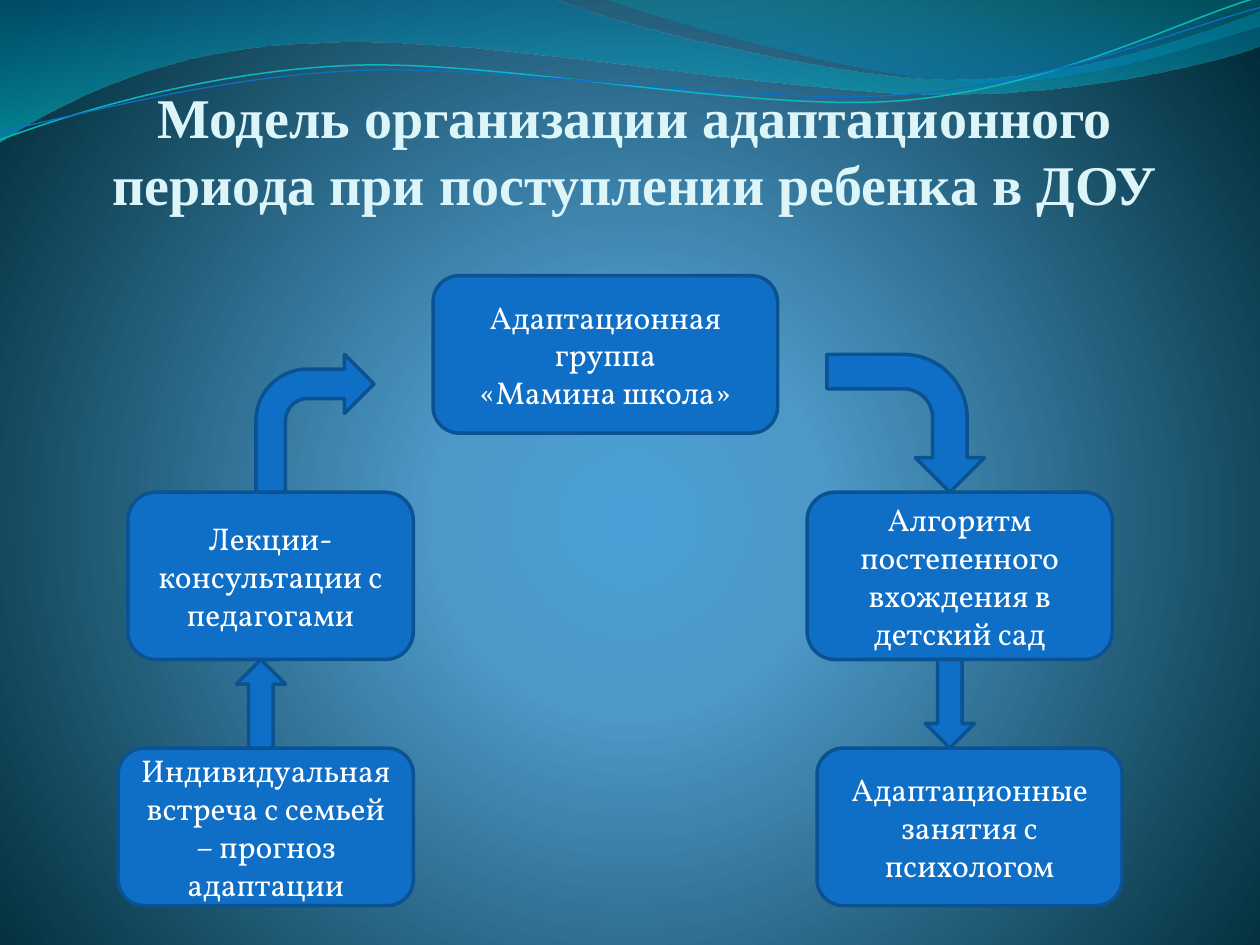
from math import cos, radians, sin

from lxml import etree
from pptx import Presentation
from pptx.dml.color import RGBColor
from pptx.enum.shapes import MSO_SHAPE
from pptx.enum.text import MSO_ANCHOR, PP_ALIGN
from pptx.oxml.ns import qn
from pptx.util import Pt

BLUE, EDGE, WHITE, PALE = "0F6FC6", "0B5292", "FFFFFF", "DBF5F9"
WAVE_TILT = -2.7

BANDS = [
    ((0, 0), [
        [(316.8, -0.7)],
        [(342.7, 12.2), (478.1, 45.4), (545.8, 45.4)],
        [(614.2, 45.4), (689.8, 18.7), (720, 6.5)],
        [(720.7, 25.9)],
        [(707.8, 31.7), (626.4, 54.7), (537.1, 54)],
        [(447.8, 54), (275, 20.2), (185, 24.5)],
        [(92.9, 25.9), (33.1, 59.8), (-0.7, 81.4)],
    ], [(0, "0074A1", 45), (100, "00C6CF", 55)]),
    ((344.9, -0.7), [
        [(366.5, 7.9), (491, 44.6), (553.7, 46.8)],
        [(616.3, 49.7), (691.9, 23), (720, 15.1)],
        [(720, 0)],
    ], [(0, "00A1A9", 30), (80, "008BBF", 45)]),
]
WAVES = [
    ((0, 79.9), [
        [(34.6, 67), (113.8, 41), (199.4, 37.4)],
        [(284.4, 33.8), (427, 64.1), (513.4, 57.6)],
        [(599.8, 51.1), (675.4, 10.8), (718.6, -1.4)],
    ], "0AB8BF", 0.85),
    ((0, 74.9), [
        [(33.8, 69.1), (118.1, 43.9), (203.8, 40.3)],
        [(290.2, 36.7), (429.8, 60.5), (516.2, 54)],
        [(601.9, 48.2), (677.5, 15.1), (720, 4.3)],
    ], BLUE, 0.75),
]
STEPS = [
    ((247.5, 157.5, 196.9, 90), "Адаптационная группа\n«Мамина школа»"),
    ((73.1, 281.25, 163.1, 95.6), "Лекции-консультации с педагогами"),
    ((67.5, 427.5, 168.75, 90), "Индивидуальная встреча с семьей – прогноз адаптации"),
    ((461.25, 281.25, 174.4, 95.6), "Алгоритм постепенного вхождения в детский сад"),
    ((466.9, 427.5, 174.4, 90), "Адаптационные занятия с психологом"),
]
ARROWS = [
    (MSO_SHAPE.BENT_ARROW, (146.25, 202.5, 67.5, 78.75), 0, None),
    (MSO_SHAPE.UP_ARROW, (135, 376.9, 28.1, 50.6), 0, None),
    (MSO_SHAPE.BENT_ARROW, (478.1, 196.9, 78.75, 90), 90, 0.461),
    (MSO_SHAPE.DOWN_ARROW, (528.75, 376.9, 28.1, 50.6), 0, None),
]


def color(value):
    """Turn a hex string into a colour."""
    return RGBColor.from_string(value)


def set_gradient(properties, stops, shading, **attributes):
    """Replace the solid fill by a gradient and return its shading element."""
    gradient = etree.Element(qn("a:gradFill"), rotWithShape="1")
    stop_list = etree.SubElement(gradient, qn("a:gsLst"))
    for position, value, opacity in stops:
        stop = etree.SubElement(stop_list, qn("a:gs"), pos=str(position * 1000))
        shade = etree.SubElement(stop, qn("a:srgbClr"), val=value)
        if opacity < 100:
            etree.SubElement(shade, qn("a:alpha"), val=str(opacity * 1000))
    element = etree.SubElement(gradient, qn(shading), **attributes)
    properties.replace(properties.find(qn("a:solidFill")), gradient)
    return element


def add_background(slide):
    """Fill the slide with a glow that darkens outwards."""
    slide.background.fill.solid()
    slide.background.fill.fore_color.rgb = color(BLUE)
    properties = slide.element.find(".//" + qn("p:bgPr"))
    stops = [(0, "4AA0D6", 100), (25, "4C98C7", 100), (100, "002C38", 100)]
    glow = set_gradient(properties, stops, "a:path", path="circle")
    etree.SubElement(glow, qn("a:fillToRect"), l="10000", t="110000", r="10000", b="100000")


def turn(point, angle, center=(359.3, 41.4)):
    """Rotate a point clockwise about a center."""
    x, y = point[0] - center[0], point[1] - center[1]
    cosine, sine = cos(radians(angle)), sin(radians(angle))
    return center[0] + x * cosine - y * sine, center[1] + x * sine + y * cosine


def add_outline(slide, start, segments, close):
    """Draw a freeform of straight and cubic segments."""
    ends = [(Pt(x), Pt(y)) for x, y in [start, *(segment[-1] for segment in segments)]]
    builder = slide.shapes.build_freeform(*ends[0])
    builder.add_line_segments(ends[1:], close=close)
    shape = builder.convert_to_shape()
    shape.shadow.inherit = False
    lines = list(shape.element.iter(qn("a:lnTo")))
    for line, segment in zip(lines, segments):
        if len(segment) == 3:
            curve = etree.Element(qn("a:cubicBezTo"))
            for x, y in segment:
                etree.SubElement(curve, qn("a:pt"), x=str(Pt(x) - shape.left),
                                 y=str(Pt(y) - shape.top))
            line.getparent().replace(line, curve)
    return shape


def add_waves(slide):
    """Draw the translucent bands and thin tilted waves along the top."""
    for start, segments, stops in BANDS:
        band = add_outline(slide, start, segments, True)
        band.line.fill.background()
        band.fill.solid()
        set_gradient(band.element.spPr, stops, "a:lin", ang="5400000", scaled="0")
    for start, segments, value, width in WAVES:
        level = [[turn(point, -WAVE_TILT) for point in segment] for segment in segments]
        wave = add_outline(slide, turn(start, -WAVE_TILT), level, False)
        wave.rotation = WAVE_TILT
        wave.fill.background()
        wave.line.color.rgb = color(value)
        wave.line.width = Pt(width)


def write(text_frame, text, font, size, value, bold=False):
    """Write centred text in one style."""
    text_frame.word_wrap = True
    text_frame.text = text
    for paragraph in text_frame.paragraphs:
        paragraph.alignment = PP_ALIGN.CENTER
        for run in paragraph.runs:
            run.font.name = font
            run.font.size = Pt(size)
            run.font.bold = bold
            run.font.color.rgb = color(value)


def add_title(slide, box):
    """Place the title at the bottom of its box."""
    text_frame = slide.shapes.add_textbox(*map(Pt, box)).text_frame
    text_frame.margin_left = text_frame.margin_right = text_frame.margin_bottom = 0
    text_frame.vertical_anchor = MSO_ANCHOR.BOTTOM
    write(text_frame, "Модель организации адаптационного периода при поступлении ребенка в ДОУ",
          "Times New Roman", 32, PALE, True)


def add_block(slide, kind, box):
    """Add a blue preset shape with a dark edge."""
    shape = slide.shapes.add_shape(kind, *map(Pt, box))
    shape.shadow.inherit = False
    shape.fill.solid()
    shape.fill.fore_color.rgb = color(BLUE)
    shape.line.color.rgb = color(EDGE)
    shape.line.width = Pt(2)
    return shape


def add_model(slide):
    """Place the steps of the model and the arrows between them."""
    for box, text in STEPS:
        step = add_block(slide, MSO_SHAPE.ROUNDED_RECTANGLE, box)
        step.text_frame.vertical_anchor = MSO_ANCHOR.MIDDLE
        write(step.text_frame, text, "Vollkorn", 18, WHITE)
    for kind, box, rotation, bend in ARROWS:
        arrow = add_block(slide, kind, box)
        arrow.rotation = rotation
        if bend:
            arrow.adjustments[3] = bend


def main():
    """Build and save the slide."""
    presentation = Presentation()
    presentation.slide_width, presentation.slide_height = Pt(720), Pt(540)
    slide = presentation.slides.add_slide(presentation.slide_layouts[6])
    add_background(slide)
    add_waves(slide)
    add_title(slide, (36, 33.75, 653.75, 90))
    add_model(slide)
    presentation.save("out.pptx")


if __name__ == "__main__":
    main()
